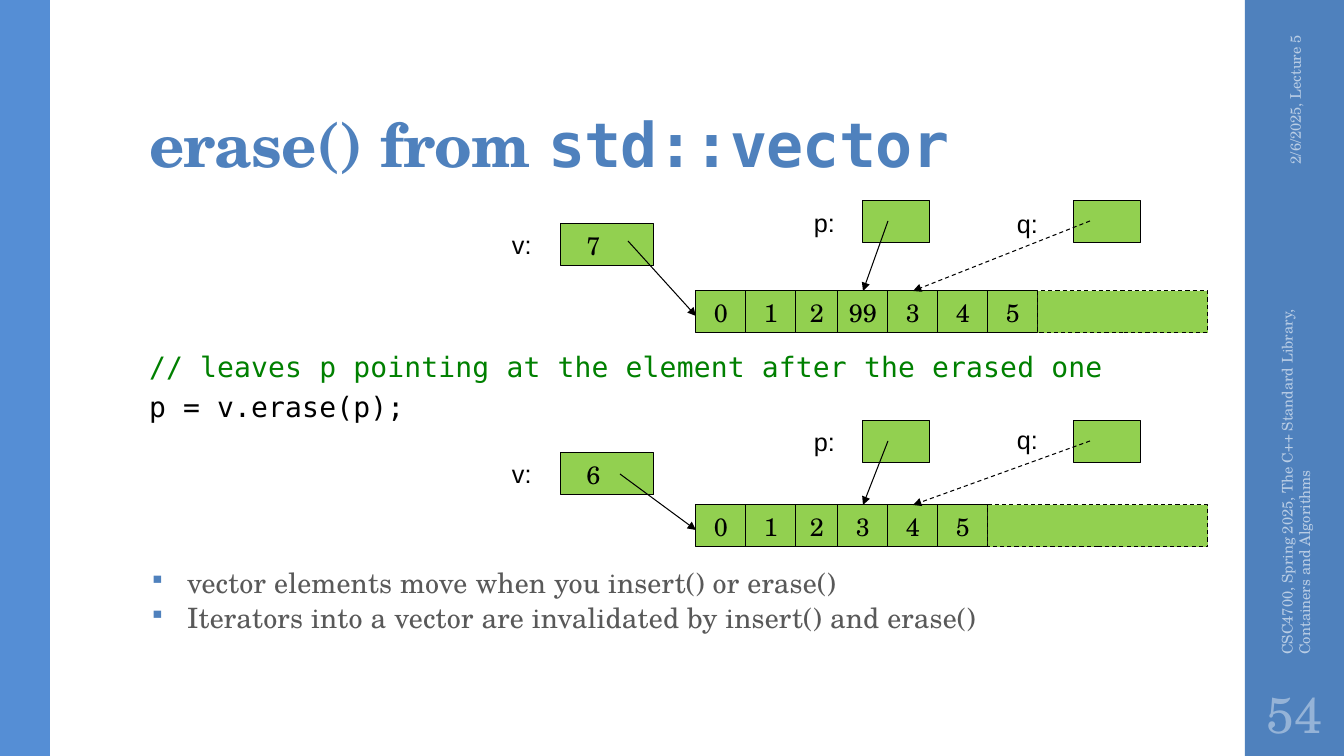
from lxml import etree
from pptx import Presentation
from pptx.dml.color import RGBColor
from pptx.enum.dml import MSO_LINE
from pptx.enum.shapes import MSO_CONNECTOR, MSO_SHAPE
from pptx.enum.text import MSO_ANCHOR as ANCHOR, PP_ALIGN as ALIGN
from pptx.oxml.ns import qn
from pptx.util import Emu, Pt

PX = 914400 / 100.8
SERIF, MONO, SANS = "TeX Gyre Schola", "DejaVu Sans Mono", "Arial"
COLORS = {
    "blue": "4F81BD", "stripe": "558ED5", "footer": "B9CDE5", "number": "95B3D7",
    "green": "92D050", "comment": "008000", "gray": "595959", "black": "000000",
}


def write(shape, text, font=SERIF, size=18, color="black", bold=False, tracking=0,
          align=ALIGN.LEFT, anchor=ANCHOR.TOP, insets=(10, 5, 10, 5)):
    frame = shape.text_frame
    frame.word_wrap = True
    frame.vertical_anchor = anchor
    frame.margin_left, frame.margin_top, frame.margin_right, frame.margin_bottom = [
        Emu(round(inset * PX)) for inset in insets]
    paragraph = frame.paragraphs[-1]
    paragraph.alignment = align
    run = paragraph.add_run()
    run.text = text
    run.font.name = font
    run.font.size = Pt(size)
    run.font.bold = bold
    run.font.color.rgb = RGBColor.from_string(COLORS[color])
    if tracking:
        run.font._element.set("spc", str(tracking))
    return paragraph


def add_box(left, top, width, height, fill=None, outlined=False, dashed=False):
    bounds = [Emu(round(length * PX)) for length in (left, top, width, height)]
    if fill is None:
        return slide.shapes.add_textbox(*bounds)
    shape = slide.shapes.add_shape(MSO_SHAPE.RECTANGLE, *bounds)
    shape.shadow.inherit = False
    shape.fill.solid()
    shape.fill.fore_color.rgb = RGBColor.from_string(COLORS[fill])
    if outlined:
        shape.line.color.rgb = RGBColor.from_string(COLORS["black"])
        shape.line.width = Pt(0.75)
        if dashed:
            shape.line.dash_style = MSO_LINE.DASH
    else:
        shape.line.fill.background()
    return shape


presentation = Presentation()
presentation.slide_width = Emu(round(1344 * PX))
presentation.slide_height = Emu(round(756 * PX))
slide = presentation.slides.add_slide(presentation.slide_layouts[6])

add_box(1245, 0, 99, 756, "blue")
add_box(0, 0, 50, 756, "stripe")

title = add_box(139, 32, 1069, 154)
for text, font in (("erase() from ", SERIF), ("std::vector", MONO)):
    paragraph = write(title, text, font, 44, "blue", bold=True, tracking=-50,
                      anchor=ANCHOR.BOTTOM, insets=(10, 3, 10, 5))
paragraph.line_spacing = 0.9

code = add_box(139, 355, 1069, 70)
code_lines = (
    ("// leaves p pointing at the element after the erased one", "comment"),
    ("p = v.erase(p);", "black"),
)
for index, (text, color) in enumerate(code_lines):
    if index:
        code.text_frame.add_paragraph()
    paragraph = write(code, text, MONO, 20, color, tracking=10, insets=(10, 0, 10, 0))
    paragraph.line_spacing = 0.85
    paragraph.space_after = Pt(8)

notes = add_box(139, 572, 1069, 80)
note_lines = (
    "vector elements move when you insert() or erase()",
    "Iterators into a vector are invalidated by insert() and erase()",
)
for index, text in enumerate(note_lines):
    if index:
        notes.text_frame.add_paragraph()
    paragraph = write(notes, text, SERIF, 20, "gray", tracking=10, insets=(10, 0, 10, 0))
    paragraph.line_spacing = 0.8
    paragraph.space_after = Pt(6)
    properties = paragraph._p.get_or_add_pPr()
    properties.set("marL", str(round(38 * PX)))
    properties.set("indent", str(round(-38 * PX)))
    bullet_color = etree.SubElement(properties, qn("a:buClr"))
    etree.SubElement(bullet_color, qn("a:srgbClr"), val=COLORS["blue"])
    etree.SubElement(properties, qn("a:buSzPct"), val="80000")
    etree.SubElement(properties, qn("a:buChar"), char="▪")

date = add_box(1190, 110, 210, 40)
date.rotation = 270
write(date, "2/6/2025, Lecture 5", size=10.5, color="footer",
      align=ALIGN.RIGHT, anchor=ANCHOR.MIDDLE)
course = add_box(1098, 447, 395, 40)
course.rotation = 270
write(course, "CSC4700, Spring 2025, The C++ Standard Library, Containers and Algorithms",
      size=10.5, color="footer", anchor=ANCHOR.MIDDLE)
write(add_box(1245, 680, 99, 66), "54", size=36, color="number",
      align=ALIGN.CENTER, anchor=ANCHOR.MIDDLE, insets=(5, 5, 5, 5))

states = (
    (["0", "1", "2", "99", "3", "4", "5"], 224, 201, 291, (628, 241), 202, 203),
    (["0", "1", "2", "3", "4", "5"], 453, 421, 505, (620, 474), 421, 419),
)
for values, vector_top, pointer_top, row_top, vector_tail, p_top, q_top in states:
    write(add_box(561, vector_top, 93, 42, "green", outlined=True), str(len(values)),
          align=ALIGN.CENTER, anchor=ANCHOR.MIDDLE, insets=(0, 0, 28, 0))

    cell_left = 696
    for index, value in enumerate(values):
        cell_width = 42 if index == 2 else 50
        write(add_box(cell_left, row_top, cell_width, 42, "green", outlined=True), value,
              align=ALIGN.CENTER, anchor=ANCHOR.MIDDLE, insets=(0, 0, 0, 0))
        cell_left += cell_width
    add_box(cell_left, row_top, 1208 - cell_left, 42, "green", outlined=True, dashed=True)

    for pointer_left in (863, 1074):
        add_box(pointer_left, pointer_top, 67, 42, "green", outlined=True)
    for label, left, top in (("v:", 502, vector_top), ("p:", 804, p_top), ("q:", 1007, q_top)):
        write(add_box(left, top, 55, 40), label, SANS)

    arrows = (
        (vector_tail, (696, row_top + 25), False),
        ((888, pointer_top + 20), (863, row_top), False),
        ((1090, pointer_top + 20), (913, row_top), True),
    )
    for start, end, dashed in arrows:
        arrow = slide.shapes.add_connector(
            MSO_CONNECTOR.STRAIGHT, *[Emu(round(length * PX)) for length in start + end])
        arrow.line.color.rgb = RGBColor.from_string(COLORS["black"])
        arrow.line.width = Pt(0.75)
        if dashed:
            arrow.line.dash_style = MSO_LINE.DASH
        etree.SubElement(arrow.line._get_or_add_ln(), qn("a:tailEnd"), type="triangle")
        etree.SubElement(arrow._element.spPr, qn("a:effectLst"))

presentation.save("out.pptx")
